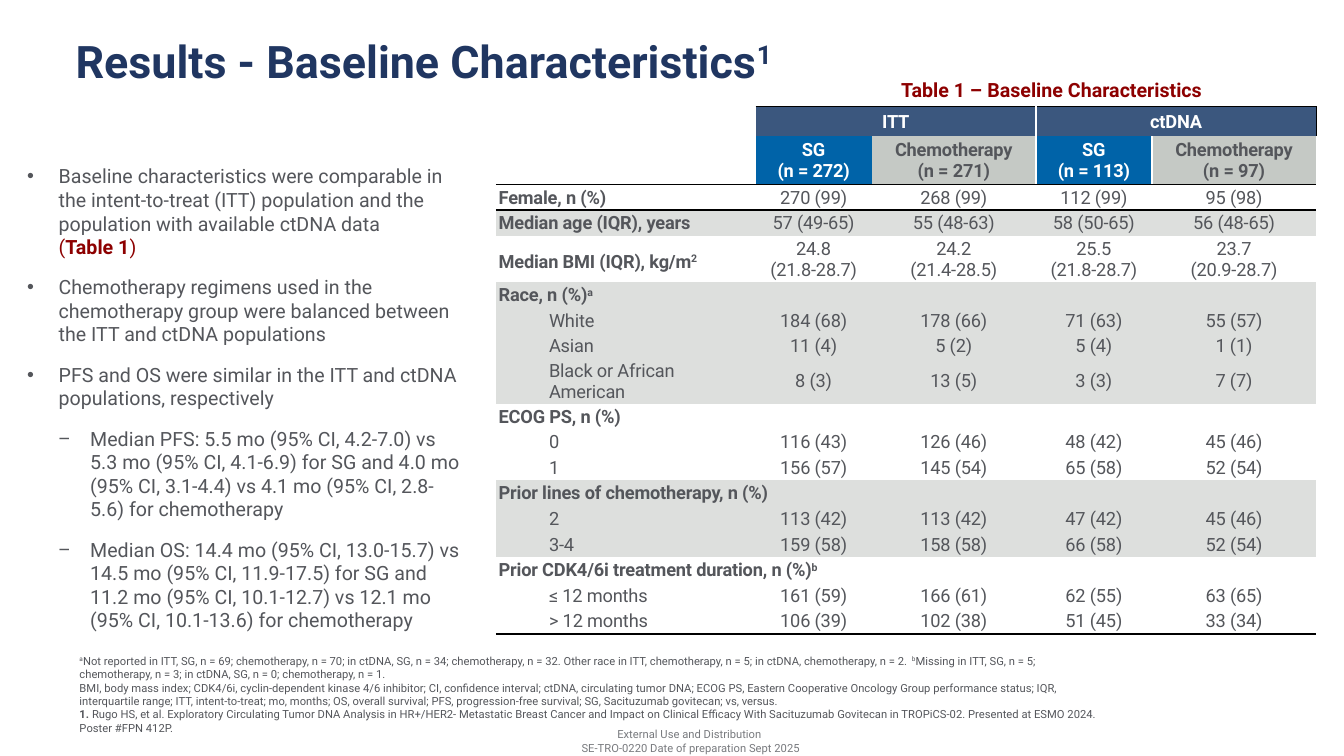
from lxml.etree import SubElement
from pptx import Presentation
from pptx.dml.color import RGBColor
from pptx.enum.text import MSO_ANCHOR as Anchor, MSO_AUTO_SIZE as AutoSize, PP_ALIGN as Align
from pptx.oxml.ns import qn
from pptx.util import Pt


class Theme:
    font = "Roboto"
    navy, text, red, footer = "203661", "54565B", "8D0000", "787A7E"
    white, black = "FFFFFF", "000000"
    population, sg, chemo, band = "3B577E", "0063A8", "C5C9C5", "DDDFDD"
    title_size, body_size, table_size, note_size = 32, 14, 13, 8


SUP = {"baseline": 30000}
BOLD = {"bold": True}


def write(frame, *paragraphs, align=Align.LEFT, **base):
    """Fill frame; a paragraph is a string or a list of strings and (text, format) pairs."""
    for number, pieces in enumerate(paragraphs):
        paragraph = frame.add_paragraph() if number else frame.paragraphs[0]
        paragraph.alignment = align
        for piece in [pieces] if isinstance(pieces, str) else pieces:
            text, extra = (piece, {}) if isinstance(piece, str) else piece
            look = {"bold": False, **base, **extra}
            for part, line in enumerate(text.split("\n")):
                if part:
                    paragraph.add_line_break()
                if not line:
                    continue
                run = paragraph.add_run()
                run.text = line
                run.font.name = Theme.font
                run.font.size = Pt(look["size"])
                run.font.bold = look["bold"]
                run.font.color.rgb = RGBColor.from_string(look["color"])
                for key in ("baseline", "spc"):
                    if key in look:
                        run.font._element.set(key, str(look[key]))


def draw_edge(cell, side, color, width):
    line = SubElement(cell._tc.get_or_add_tcPr(), qn(f"a:ln{side}"), w=str(Pt(width)))
    SubElement(SubElement(line, qn("a:solidFill")), qn("a:srgbClr"), val=color)


prs = Presentation()
prs.slide_width, prs.slide_height = Pt(960), Pt(540)
slide = prs.slides.add_slide(prs.slide_layouts[1])

# Title
title = slide.shapes.title
title.left, title.top, title.width, title.height = Pt(46.8), Pt(24.5), Pt(867), Pt(62)
title.text_frame.vertical_anchor = Anchor.TOP
title.text_frame.auto_size = AutoSize.NONE
write(title.text_frame, ["Results - Baseline Characteristics", ("1", SUP)],
      size=Theme.title_size, color=Theme.navy, bold=True)
title.text_frame.paragraphs[0].line_spacing = 0.9

# Findings
findings = slide.placeholders[1]
findings.left, findings.top, findings.width, findings.height = Pt(12.2), Pt(113.8), Pt(324), Pt(344)
findings.text_frame.auto_size = AutoSize.SHAPE_TO_FIT_TEXT
red = {"color": Theme.red}
write(
    findings.text_frame,
    ["Baseline characteristics were comparable in the intent-to-treat (ITT) population and the "
     "population with available ctDNA data \n", ("(", red), ("Table 1", {**red, **BOLD}), (")", red)],
    "Chemotherapy regimens used in the chemotherapy group were balanced between the ITT and "
    "ctDNA populations",
    "PFS and OS were similar in the ITT and ctDNA populations, respectively",
    "Median PFS: 5.5 mo (95% CI, 4.2-7.0) vs 5.3 mo (95% CI, 4.1-6.9) for SG and 4.0 mo "
    "(95% CI, 3.1-4.4) vs 4.1 mo (95% CI, 2.8-5.6) for chemotherapy",
    "Median OS: 14.4 mo (95% CI, 13.0-15.7) vs 14.5 mo (95% CI, 11.9-17.5) for SG and 11.2 mo "
    "(95% CI, 10.1-12.7) vs 12.1 mo (95% CI, 10.1-13.6) for chemotherapy",
    size=Theme.body_size, color=Theme.text)
for paragraph, level in zip(findings.text_frame.paragraphs, (0, 0, 0, 1, 1)):
    paragraph.level = level
    paragraph.space_before, paragraph.space_after = Pt(0), Pt(12)
    properties = paragraph._p.get_or_add_pPr()
    properties.set("marL", str(Pt(22.5 * (level + 1))))
    properties.set("indent", str(Pt(-22.5)))
    SubElement(properties, qn("a:buChar"), char="•−"[level])

# Footer, notes and table caption
note_look = {"size": Theme.note_size, "color": Theme.text}
for box, paragraphs, look in [
    ((370, 517.7, 247, 23),
     ["External Use and Distribution ", "SE-TRO-0220 Date of preparation Sept 2025"],
     {"size": Theme.note_size, "color": Theme.footer, "align": Align.CENTER}),
    ((49.7, 463.7, 743, 65.5),
     [[("a", SUP), "Not reported in ITT, SG, n = 69; chemotherapy, n = 70; in ctDNA, SG, n = 34; "
       "chemotherapy, n = 32. Other race in ITT, chemotherapy, n = 5; in ctDNA, chemotherapy, n = 2. ",
       ("b", SUP), "Missing in ITT, SG, n = 5; chemotherapy, n = 3; in ctDNA, SG, n = 0; "
       "chemotherapy, n = 1."],
      ["BMI, body mass index; CDK4/6i, cyclin-dependent kinase 4/6 inhibitor; CI, confidence interval; "
       "ctDNA, circulating tumor DNA; ECOG PS, Eastern Cooperative Oncology Group performance status; "
       "IQR, interquartile range; ITT, intent-to-treat; mo, months; OS, overall survival; PFS, "
       "progression-free survival; SG, Sacituzumab govitecan; vs, versus.\n", ("1. ", BOLD),
       "Rugo HS, et al. Exploratory Circulating Tumor DNA Analysis in HR+/HER2- Metastatic Breast "
       "Cancer and Impact on Clinical Efficacy With Sacituzumab Govitecan in TROPiCS-02. Presented at "
       "ESMO 2024. Poster #FPN 412P."]], note_look),
    ((636.5, 51.8, 303, 24.5), ["Table 1 – Baseline Characteristics"],
     {"size": Theme.body_size, "color": Theme.red, "bold": True}),
]:
    frame = slide.shapes.add_textbox(*map(Pt, box)).text_frame
    frame.word_wrap = True
    frame.vertical_anchor = Anchor.MIDDLE if look.get("align") else Anchor.TOP
    write(frame, *paragraphs, **look)

# Baseline table: groups alternate between plain and shaded
header = [("", "ITT", "", "ctDNA", ""),
          ("", "SG\n(n = 272)", "Chemotherapy\n(n = 271)", "SG\n(n = 113)", "Chemotherapy\n(n = 97)")]
groups = [
    [("Female, n (%)", "270 (99)", "268 (99)", "112 (99)", "95 (98)")],
    [("Median age (IQR), years", "57 (49-65)", "55 (48-63)", "58 (50-65)", "56 (48-65)")],
    [(["Median BMI (IQR), kg/m", ("2", SUP)], "24.8\n(21.8-28.7)", "24.2\n(21.4-28.5)",
      "25.5\n(21.8-28.7)", "23.7\n(20.9-28.7)")],
    [(["Race, n (%)", ("a", SUP)],),
     ("White", "184 (68)", "178 (66)", "71 (63)", "55 (57)"),
     ("Asian", "11 (4)", "5 (2)", "5 (4)", "1 (1)"),
     ("Black or African American", "8 (3)", "13 (5)", "3 (3)", "7 (7)")],
    [("ECOG PS, n (%)",),
     ("0", "116 (43)", "126 (46)", "48 (42)", "45 (46)"),
     ("1", "156 (57)", "145 (54)", "65 (58)", "52 (54)")],
    [("Prior lines of chemotherapy, n (%)",),
     ("2", "113 (42)", "113 (42)", "47 (42)", "45 (46)"),
     ("3-4", "159 (58)", "158 (58)", "66 (58)", "52 (54)")],
    [(["Prior CDK4/6i treatment duration, n (%)", ("b", SUP)],),
     ("≤ 12 months", "161 (59)", "166 (61)", "62 (55)", "63 (65)"),
     ("> 12 months", "106 (39)", "102 (38)", "51 (45)", "33 (34)")],
]
rows = [(row, None, True) for row in header]
rows += [(row, Theme.band if number % 2 else None, row is group[0])
         for number, group in enumerate(groups) for row in group]
last = len(rows) - 1
col_widths = (185.6, 82.8, 117.4, 82.8, 117.4)
tall_rows = {0: 20.9, 1: 34.6, 4: 33, 8: 26}

table = slide.shapes.add_table(len(rows), 5, Pt(354.2), Pt(76.3), Pt(586), Pt(370)).table
table.first_row = table.horz_banding = False
no_style = "{2D5ABB26-0587-4C30-8999-92F81FD0307C}"
table._tbl.tblPr.find(qn("a:tableStyleId")).text = no_style
for column, width in zip(table.columns, col_widths):
    column.width = Pt(width)

rule, divider, outline = (Theme.black, 1.5), (Theme.white, 1.5), (Theme.black, 0.75)
for r, (row, shade, is_heading) in enumerate(rows):
    table.rows[r].height = Pt(tall_rows.get(r, 18.26))
    for c in range(5):
        cell = table.cell(r, c)
        cell.vertical_anchor = Anchor.MIDDLE
        cell.margin_left = cell.margin_right = cell.margin_bottom = Pt(0)
        cell.margin_top = Pt(1)

        edges = {}
        if r < 2 and c == 3:
            edges["L"] = divider
        if (r, c) in ((0, 1), (0, 2), (1, 2)):
            edges["R"] = divider
        if r == 0 and c > 2:
            edges["R"] = outline
        if r == 2 or (r == 0 and c):
            edges["T"] = rule if r else outline
        if r in (1, last) or (r, c) == (0, 0):
            edges["B"] = rule
        for side, (color, width) in edges.items():
            draw_edge(cell, side, color, width)

        fill = shade
        if r < 2 and c:
            fill = Theme.population if r == 0 else Theme.sg if c % 2 else Theme.chemo
        if fill:
            cell.fill.solid()
            cell.fill.fore_color.rgb = RGBColor.from_string(fill)
        else:
            cell.fill.background()

        if c >= len(row) or not row[c]:
            continue
        if c == 0:
            cell.margin_left, cell.margin_right = Pt(2 if is_heading else 38), Pt(4)
            cell.margin_top = Pt(5 if r == 4 else 1)
        paragraphs = row[c].split("\n") if isinstance(row[c], str) else [row[c]]
        write(cell.text_frame, *paragraphs, size=Theme.table_size, spc=-10,
              color=Theme.white if fill in (Theme.population, Theme.sg) else Theme.text,
              bold=r < 2 or (c == 0 and is_heading), align=Align.CENTER if c else Align.LEFT)
    if len(row) == 1:
        table.cell(r, 0).merge(table.cell(r, 4))

for start, end in (((0, 0), (1, 0)), ((0, 1), (0, 2)), ((0, 3), (0, 4))):
    table.cell(*start).merge(table.cell(*end))

prs.save("out.pptx")
